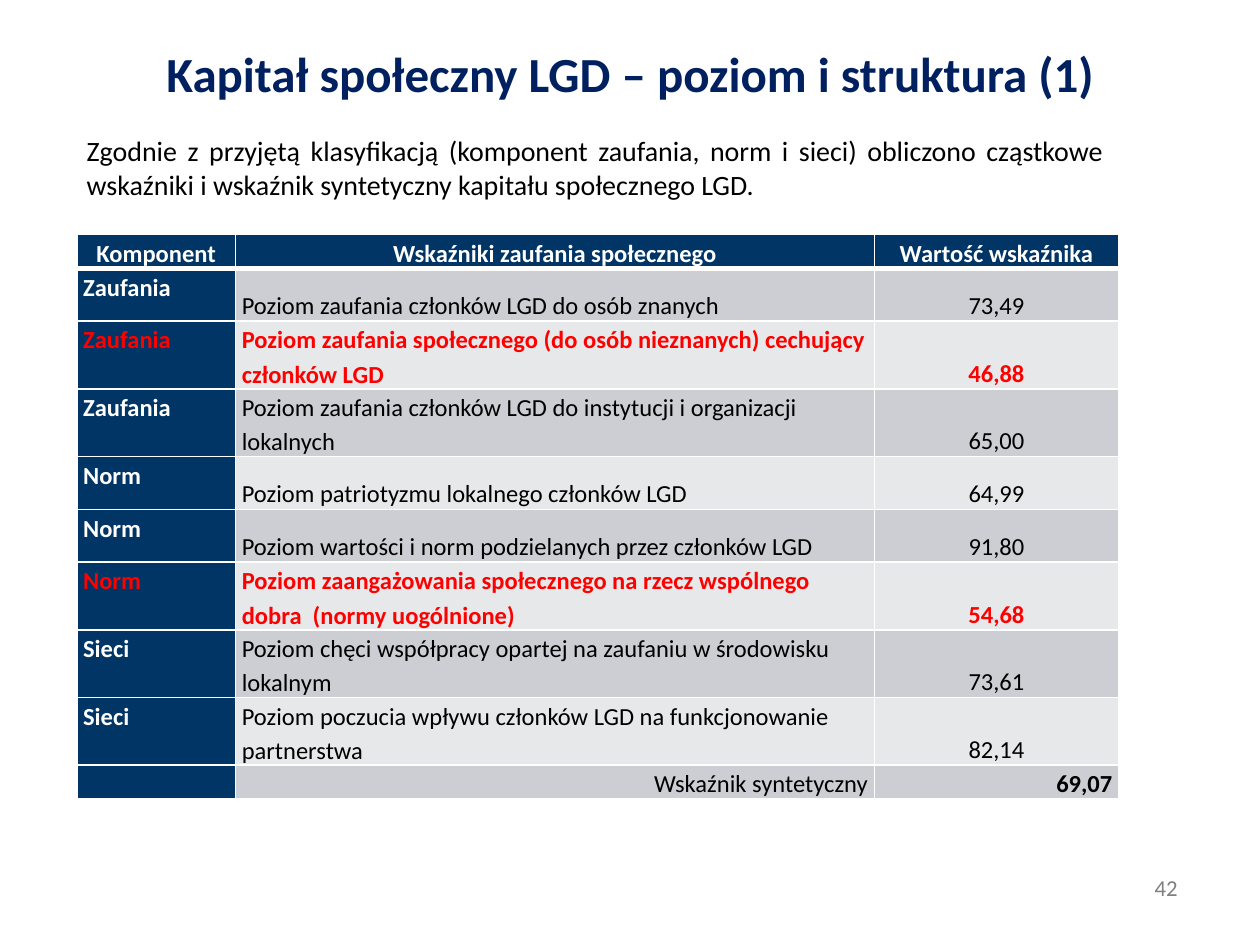
from lxml import etree
from pptx import Presentation
from pptx.dml.color import RGBColor
from pptx.enum.text import MSO_ANCHOR, PP_ALIGN
from pptx.oxml.ns import qn
from pptx.util import Pt

LEFT, CENTER, RIGHT, JUSTIFY = PP_ALIGN.LEFT, PP_ALIGN.CENTER, PP_ALIGN.RIGHT, PP_ALIGN.JUSTIFY
TOP, MIDDLE, BOTTOM = MSO_ANCHOR.TOP, MSO_ANCHOR.MIDDLE, MSO_ANCHOR.BOTTOM

WHITE = RGBColor(0xFF, 0xFF, 0xFF)
BLACK = RGBColor(0, 0, 0)
GRAY = RGBColor(0x80, 0x80, 0x80)
RED = RGBColor(0xFF, 0, 0)
TITLE_BLUE = RGBColor(0, 0x20, 0x60)
NAVY = RGBColor(0x01, 0x35, 0x65)
BANDS = (RGBColor(0xCC, 0xCE, 0xD3), RGBColor(0xE7, 0xE8, 0xEA))

HEADERS = ("Komponent", "Wskaźniki zaufania społecznego", "Wartość wskaźnika")
# Component, indicator, value, highlighted
INDICATORS = (
    ("Zaufania", "Poziom zaufania członków LGD do osób znanych", "73,49", False),
    ("Zaufania", "Poziom zaufania społecznego (do osób nieznanych) cechujący członków LGD", "46,88", True),
    ("Zaufania", "Poziom zaufania członków LGD do instytucji i organizacji lokalnych", "65,00", False),
    ("Norm", "Poziom patriotyzmu lokalnego członków LGD", "64,99", False),
    ("Norm", "Poziom wartości i norm podzielanych przez członków LGD", "91,80", False),
    ("Norm", "Poziom zaangażowania społecznego na rzecz wspólnego dobra  (normy uogólnione)", "54,68", True),
    ("Sieci", "Poziom chęci współpracy opartej na zaufaniu w środowisku lokalnym", "73,61", False),
    ("Sieci", "Poziom poczucia wpływu członków LGD na funkcjonowanie partnerstwa", "82,14", False),
)
COL_WIDTHS = (90.7, 365, 139.7)
ROW_HEIGHTS = (17.3, *[30.24] * len(INDICATORS), 17.3)


def write_text(tf, text, size=14, color=BLACK, bold=False, align=LEFT, spacing=None, font="Calibri"):
    p = tf.paragraphs[0]
    p.alignment = align
    if spacing:
        p.line_spacing = spacing
    if not text:
        # An empty cell still needs its text size to keep the row low
        p._p.get_or_add_endParaRPr().set("sz", str(size * 100))
        return
    r = p.add_run()
    r.text = text
    r.font.name, r.font.size, r.font.bold = font, Pt(size), bold
    r.font.color.rgb = color


class SlideBuilder:
    def __init__(self, slide):
        self.s = slide

    def text(self, left, top, width, height, text, anchor=TOP, **fmt):
        sp = self.s.shapes.add_textbox(Pt(left), Pt(top), Pt(width), Pt(height))
        tf = sp.text_frame
        tf.word_wrap = True
        tf.vertical_anchor = anchor
        write_text(tf, text, **fmt)

    def table(self, left, top, col_widths, row_heights):
        frame = self.s.shapes.add_table(len(row_heights), len(col_widths), Pt(left), Pt(top),
                                        Pt(sum(col_widths)), Pt(sum(row_heights)))
        table = frame.table
        for col, width in zip(table.columns, col_widths):
            col.width = Pt(width)
        for row, height in zip(table.rows, row_heights):
            row.height = Pt(height)
        return table

    def border(self, cell, side, width):
        ln = etree.SubElement(cell._tc.get_or_add_tcPr(), qn(f"a:ln{side}"), w=str(Pt(width)))
        fill = etree.SubElement(ln, qn("a:solidFill"))
        etree.SubElement(fill, qn("a:srgbClr"), val=str(WHITE))

    def cell(self, cell, text, fill, anchor=BOTTOM, top_line=1, bottom_line=1, **fmt):
        for side, width in zip("LRTB", (1, 1, top_line, bottom_line)):
            self.border(cell, side, width)
        cell.fill.solid()
        cell.fill.fore_color.rgb = fill
        cell.margin_left = cell.margin_right = Pt(3.6)
        cell.margin_top = cell.margin_bottom = 0
        cell.vertical_anchor = anchor
        write_text(cell.text_frame, text, spacing=1.15, **fmt)


def main():
    prs = Presentation()
    prs.slide_width, prs.slide_height = Pt(720), Pt(540)
    b = SlideBuilder(prs.slides.add_slide(prs.slide_layouts[6]))

    # Page number and introduction
    b.text(637.9, 495.4, 56.9, 23, "42", anchor=MIDDLE, size=13, color=GRAY, align=CENTER)
    b.text(42.5, 72.7, 595.4, 46,
           "Zgodnie z przyjętą klasyfikacją (komponent zaufania, norm i sieci) obliczono "
           "cząstkowe wskaźniki i wskaźnik syntetyczny kapitału społecznego LGD.",
           size=16, align=JUSTIFY)

    # Table header
    table = b.table(43.9, 134, COL_WIDTHS, ROW_HEIGHTS)
    for col, header in enumerate(HEADERS):
        b.cell(table.cell(0, col), header, NAVY, anchor=MIDDLE if col else BOTTOM,
               bottom_line=3, color=WHITE, bold=True, align=CENTER)

    # Indicator rows
    for row, (component, indicator, value, marked) in enumerate(INDICATORS, 1):
        band = BANDS[(row - 1) % 2]
        top_line = 3 if row == 1 else 1
        body = dict(top_line=top_line, color=RED if marked else BLACK, bold=marked)
        b.cell(table.cell(row, 0), component, NAVY, anchor=TOP, top_line=top_line,
               color=RED if marked else WHITE, bold=True)
        b.cell(table.cell(row, 1), indicator, band, **body)
        b.cell(table.cell(row, 2), value, band, align=CENTER, **body)

    # Synthetic indicator
    last = len(ROW_HEIGHTS) - 1
    b.cell(table.cell(last, 0), "", NAVY)
    b.cell(table.cell(last, 1), "Wskaźnik syntetyczny", BANDS[0], align=RIGHT)
    b.cell(table.cell(last, 2), "69,07", BANDS[0], align=RIGHT, bold=True)

    # Title
    b.text(36, 21.6, 648, 67, "Kapitał społeczny LGD – poziom i struktura (1)",
           size=28, color=TITLE_BLUE, bold=True, align=CENTER)

    prs.save("out.pptx")


if __name__ == "__main__":
    main()
